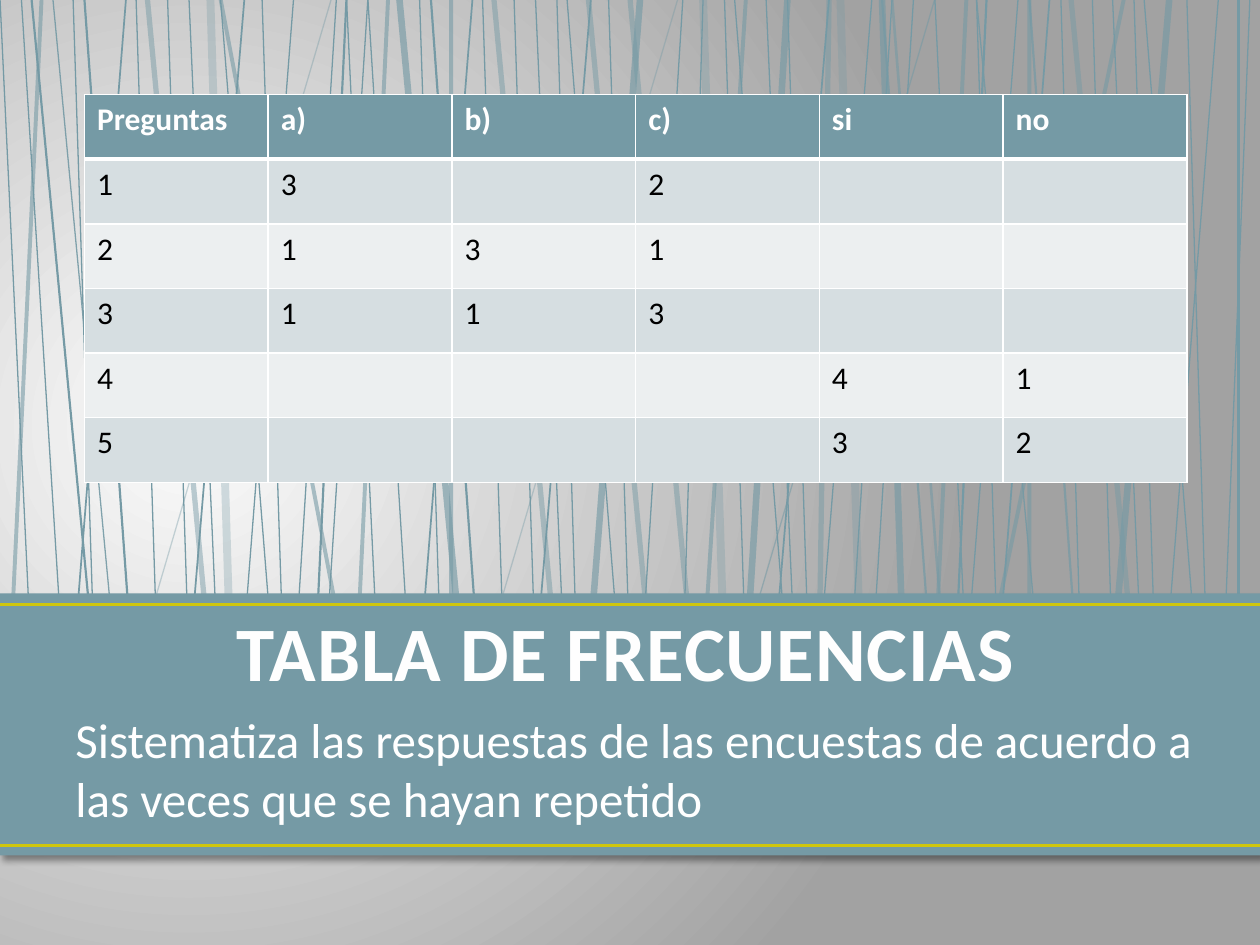
from lxml import etree
from pptx import Presentation
from pptx.dml.color import RGBColor
from pptx.enum.shapes import MSO_CONNECTOR, MSO_SHAPE
from pptx.enum.text import MSO_ANCHOR, PP_ALIGN
from pptx.oxml.ns import qn
from pptx.util import Inches, Pt

STRAIGHT = MSO_CONNECTOR.STRAIGHT
RECTANGLE = MSO_SHAPE.RECTANGLE
TOP, BOTTOM = MSO_ANCHOR.TOP, MSO_ANCHOR.BOTTOM
LEFT, CENTER = PP_ALIGN.LEFT, PP_ALIGN.CENTER

TEAL, GOLD, WHITE, BLACK = "759AA5", "CFC60D", "FFFFFF", "000000"
ROW_FILLS = ["D6DEE1", "ECEFF0"]
STRAND_TOP, STRAND_BOTTOM = -0.01, 5.27

STRANDS = {
    (0.75, 100): [
        (2.08, 2.25), (1.75, 2.17), (2.33, 1.92), (0, 0.25), (0.17, 0.5),
        (0.58, 0.75), (2.67, 2.34), (2.92, 2.58), (1.5, 1.73), (1.08, 1.25),
        (1.33, 1.5), (4.83, 5), (4.5, 4.92), (2.75, 3), (2.92, 3.25),
        (4.42, 4.58), (3.33, 3.5), (5.42, 5.09), (5.58, 5.42), (4.25, 4.48),
        (3.83, 4), (4.08, 4.25), (5.83, 6.25), (6.92, 6.5), (6.25, 6.42),
        (7.25, 6.92), (7.08, 6.75), (6.08, 6.31), (5.75, 5.92), (7.42, 7.67),
        (7.75, 7.92), (8.42, 8.58), (8.67, 8.83), (9.42, 9.58), (9.08, 9.5),
        (9.67, 9.25), (9, 9.17), (9.92, 9.71), (8.83, 9.06), (8.08, 7.67),
    ],
    (0.75, 90): [(0.42, 0.92), (7.75, 8.25)],
    (0.75, 56): [(7.42, 5.87)],
    (0.75, 39): [(2.63, 1.08), (5.38, 3.83)],
    (1, 100): [(1, 0.58), (1.94, 1.5), (3.75, 3.33), (4.69, 4.25),
               (6.58, 6.14), (8.33, 7.92)],
    (1.25, 100): [(0.25, 0.75), (0.67, 1.05), (2.75, 2.5), (3.42, 3.8),
                  (7.83, 7.58), (9.83, 9.83)],
    (1.25, 72): [(8.17, 8.55), (7, 7.39)],
    (1.5, 58): [(7.08, 7.5)],
    (2.25, 58): [(0.33, 0.08), (1.75, 2.75), (3.08, 2.83), (3.58, 3.58),
                 (5.92, 5.58), (7.67, 7.42), (8.17, 8.17), (8.92, 7.83)],
    (3, 47): [(1.17, 1.67), (3.92, 4.42), (4.67, 5.17), (8.5, 9),
              (6.58, 6.5), (5, 5.5)],
    (3.75, 63): [(5.08, 4.67), (3.17, 3.67), (9.28, 8.83), (7, 7.17),
                 (6.25, 5.92)],
    (4.5, 30): [(1.67, 1.83), (6.67, 6.83), (5.58, 5.75)],
}

FREQUENCIES = [
    ["Preguntas", "a)", "b)", "c)", "si", "no"],
    ["1", "3", "", "2", "", ""],
    ["2", "1", "3", "1", "", ""],
    ["3", "1", "1", "3", "", ""],
    ["4", "", "", "", "4", "1"],
    ["5", "", "", "", "3", "2"],
]


def rgb(value):
    return RGBColor.from_string(value)


def add_node(parent, tag, **attributes):
    return etree.SubElement(parent, qn(tag), {k: str(v) for k, v in attributes.items()})


def add_solid(parent, color, alpha=100):
    tint = add_node(add_node(parent, "a:solidFill"), "a:srgbClr", val=color)
    if alpha < 100:
        add_node(tint, "a:alpha", val=alpha * 1000)


class SlideBuilder:
    font_name = "Calibri"

    def __init__(self, slide):
        self.slide = slide

    def background(self, inner, outer):
        fill = self.slide.background.fill
        fill.gradient()
        for stop, color in zip(fill.gradient_stops, (inner, outer)):
            stop.color.rgb = rgb(color)
        gradient = self.slide.element.find(".//" + qn("a:gradFill"))
        gradient.remove(gradient.find(qn("a:lin")))
        circle = add_node(gradient, "a:path", path="circle")
        add_node(circle, "a:fillToRect", l=15000, t=50000, r=85000, b=60000)

    def line(self, x1, y1, x2, y2, color, width, alpha=100):
        line = self.slide.shapes.add_connector(
            STRAIGHT, Inches(x1), Inches(y1), Inches(x2), Inches(y2))
        line.line.width = Pt(width)
        line.line.color.rgb = rgb(color)
        if alpha < 100:
            tint = line.line.color._xFill.find(qn("a:srgbClr"))
            add_node(tint, "a:alpha", val=alpha * 1000)
        add_node(line._element.spPr, "a:effectLst")

    def band(self, x, y, width, height, color):
        band = self.slide.shapes.add_shape(
            RECTANGLE, Inches(x), Inches(y), Inches(width), Inches(height))
        band.fill.solid()
        band.fill.fore_color.rgb = rgb(color)
        band.line.fill.background()
        band.shadow.inherit = False
        effects = band._element.spPr.find(qn("a:effectLst"))
        shadow = add_node(effects, "a:outerShdw", blurRad=Pt(4), dist=Pt(3),
                          dir=45 * 60000, algn="tl", rotWithShape=0)
        add_node(add_node(shadow, "a:srgbClr", val=BLACK), "a:alpha", val=40000)

    def style(self, paragraph, size, color, bold=False):
        for run in paragraph.runs:
            run.font.name = self.font_name
            run.font.size = Pt(size)
            run.font.bold = bold
            run.font.color.rgb = rgb(color)

    def text(self, x, y, width, height, wording, size, color,
             bold=False, align=LEFT, anchor=TOP):
        frame = self.slide.shapes.add_textbox(
            Inches(x), Inches(y), Inches(width), Inches(height)).text_frame
        frame.word_wrap = True
        frame.vertical_anchor = anchor
        frame.text = wording
        paragraph = frame.paragraphs[0]
        paragraph.alignment = align
        self.style(paragraph, size, color, bold)
        return paragraph.runs[0]

    def outline(self, run, color, width, spacing):
        properties = run.font._element
        properties.set("spc", str(int(spacing * 100)))
        border = add_node(properties, "a:ln", w=Pt(width))
        add_solid(border, color)
        properties.insert(0, border)

    def borders(self, cell, bottom):
        properties = cell._tc.get_or_add_tcPr()
        widths = {"a:lnL": 1, "a:lnR": 1, "a:lnT": 1, "a:lnB": bottom}
        for position, (side, width) in enumerate(widths.items()):
            border = add_node(properties, side, w=Pt(width))
            add_solid(border, WHITE)
            properties.insert(position, border)

    def table(self, x, y, width, height, rows):
        table = self.slide.shapes.add_table(
            len(rows), len(rows[0]), Inches(x), Inches(y),
            Inches(width), Inches(height)).table
        for r, row in enumerate(rows):
            header = r == 0
            for c, value in enumerate(row):
                cell = table.cell(r, c)
                cell.text = value
                cell.fill.solid()
                cell.fill.fore_color.rgb = rgb(TEAL if header else ROW_FILLS[(r - 1) % 2])
                self.style(cell.text_frame.paragraphs[0], 18,
                           WHITE if header else BLACK, header)
                self.borders(cell, 3 if header else 1)


def main():
    presentation = Presentation()
    presentation.slide_width = Inches(10)
    presentation.slide_height = Inches(7.5)
    builder = SlideBuilder(presentation.slides.add_slide(presentation.slide_layouts[6]))
    builder.background("FCFCFC", "A2A2A2")
    for (width, alpha), strands in STRANDS.items():
        for top_x, bottom_x in strands:
            builder.line(top_x, STRAND_TOP, bottom_x, STRAND_BOTTOM, TEAL, width, alpha)
    builder.band(0, 4.71, 10, 2.08, TEAL)
    for y in (4.8, 6.71):
        builder.line(0, y, 10, y, GOLD, 1.5)
    builder.text(0.5, 5.58, 9.08, 1.02,
                 "Sistematiza las respuestas de las encuestas de acuerdo a "
                 "las veces que se hayan repetido", 28, WHITE)
    title = builder.text(0.5, 4.88, 9.08, 0.7, "TABLA DE FRECUENCIAS ", 44, "FEFEFE",
                         bold=True, align=CENTER, anchor=BOTTOM)
    builder.outline(title, "384F55", 1.05, 0.5)
    builder.table(0.67, 0.75, 8.75, 3.08, FREQUENCIES)
    presentation.save("out.pptx")


if __name__ == "__main__":
    main()
